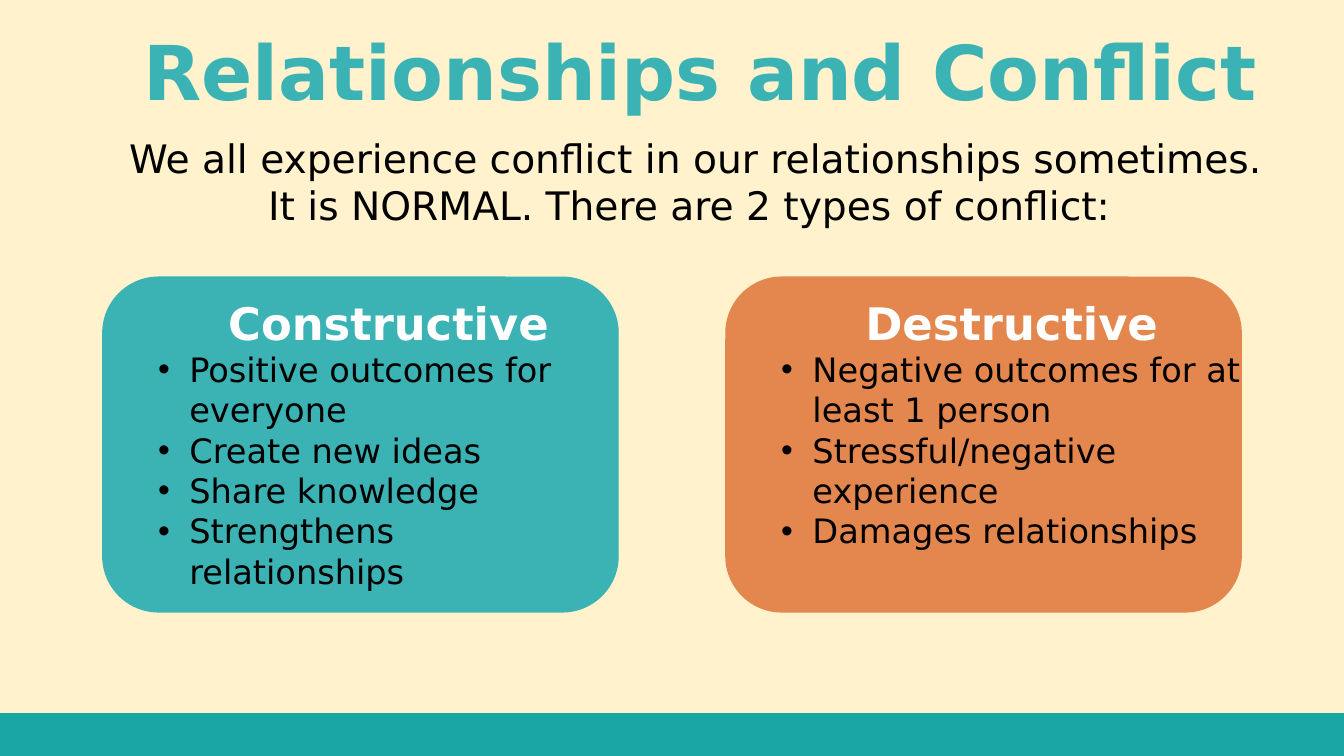
from dataclasses import dataclass

from lxml import etree
from pptx import Presentation
from pptx import util as u
from pptx.dml.color import RGBColor
from pptx.enum import shapes, text
from pptx.oxml.ns import qn


@dataclass(frozen=True)
class Theme:
    font: str = "DejaVu Sans"
    cream: str = "FFF2CC"
    teal: str = "3BB2B3"
    deep_teal: str = "1AA7A4"
    orange: str = "E4874E"
    black: str = "000000"
    white: str = "FFFFFF"
    title_size: int = 54
    heading_size: int = 32
    intro_size: int = 28
    body_size: int = 24


@dataclass(frozen=True)
class Box:
    left: float
    top: float
    width: float
    height: float

    def lengths(self) -> list[u.Length]:
        return [u.Inches(n) for n in (self.left, self.top, self.width, self.height)]


@dataclass(frozen=True)
class ConflictType:
    heading: str
    outcomes: tuple[str, ...]
    color: str
    left: float
    text_height: float


THEME = Theme()
SLIDE_WIDTH, SLIDE_HEIGHT = 13.33, 7.5
CARD_TOP, CARD_WIDTH, CARD_HEIGHT = 2.75, 5.11, 3.32
TEXT_OFFSET, TEXT_TOP, TEXT_WIDTH = 0.45, 2.88, 4.77
BULLET_INDENT = u.Inches(0.31)

CONFLICT_TYPES = (
    ConflictType(
        "Destructive",
        (
            "Negative outcomes for at least 1 person",
            "Stressful/negative experience",
            "Damages relationships",
        ),
        THEME.orange, 7.2, 2.66,
    ),
    ConflictType(
        "Constructive",
        (
            "Positive outcomes for everyone",
            "Create new ideas",
            "Share knowledge",
            "Strengthens relationships",
        ),
        THEME.teal, 1.02, 3.06,
    ),
)


def add_frame(parent, box: Box):
    frame = parent.add_textbox(*box.lengths()).text_frame
    frame.word_wrap = True
    frame.auto_size = text.MSO_AUTO_SIZE.SHAPE_TO_FIT_TEXT
    return frame


def write(paragraph, words: str, *, size: int, color: str = THEME.black,
          bold: bool = False, bullet: bool = False) -> None:
    if bullet:
        paragraph.alignment = text.PP_ALIGN.LEFT
        properties = paragraph._p.get_or_add_pPr()
        properties.set("marL", str(BULLET_INDENT))
        properties.set("indent", str(-BULLET_INDENT))
        etree.SubElement(properties, qn("a:buFont"), typeface="Arial")
        etree.SubElement(properties, qn("a:buChar"), char="•")
    else:
        paragraph.alignment = text.PP_ALIGN.CENTER
    run = paragraph.add_run()
    run.text = words
    run.font.name = THEME.font
    run.font.size = u.Pt(size)
    run.font.bold = bold
    run.font.color.rgb = RGBColor.from_string(color)


def add_panel(parent, kind: shapes.MSO_SHAPE, box: Box, color: str) -> None:
    panel = parent.add_shape(kind, *box.lengths())
    panel.shadow.inherit = False
    panel.fill.solid()
    panel.fill.fore_color.rgb = RGBColor.from_string(color)
    panel.line.color.rgb = RGBColor.from_string(color)
    panel.line.width = u.Pt(1)


def add_conflict_card(slide, conflict: ConflictType) -> None:
    card = slide.shapes.add_group_shape().shapes
    add_panel(card, shapes.MSO_SHAPE.ROUNDED_RECTANGLE,
              Box(conflict.left, CARD_TOP, CARD_WIDTH, CARD_HEIGHT), conflict.color)
    frame = add_frame(card, Box(conflict.left + TEXT_OFFSET, TEXT_TOP,
                                TEXT_WIDTH, conflict.text_height))
    write(frame.paragraphs[0], conflict.heading, size=THEME.heading_size,
          color=THEME.white, bold=True)
    for outcome in conflict.outcomes:
        write(frame.add_paragraph(), outcome, size=THEME.body_size, bullet=True)


def main() -> None:
    deck = Presentation()
    deck.slide_width = u.Inches(SLIDE_WIDTH)
    deck.slide_height = u.Inches(SLIDE_HEIGHT)
    slide = deck.slides.add_slide(deck.slide_layouts[6])
    slide.background.fill.solid()
    slide.background.fill.fore_color.rgb = RGBColor.from_string(THEME.cream)

    title = add_frame(slide.shapes, Box(0.81, 0.2, 12.53, 1.01))
    write(title.paragraphs[0], "Relationships and Conflict ",
          size=THEME.title_size, color=THEME.teal, bold=True)
    intro = add_frame(slide.shapes, Box(1.02, 1.28, 11.75, 1.04))
    write(intro.paragraphs[0],
          "We all experience conflict in our relationships sometimes. "
          "It is NORMAL. There are 2 types of conflict: ",
          size=THEME.intro_size)

    for conflict in CONFLICT_TYPES:
        add_conflict_card(slide, conflict)

    add_panel(slide.shapes, shapes.MSO_SHAPE.RECTANGLE,
              Box(0, 7.08, SLIDE_WIDTH, 0.42), THEME.deep_teal)
    deck.save("out.pptx")


if __name__ == "__main__":
    main()
